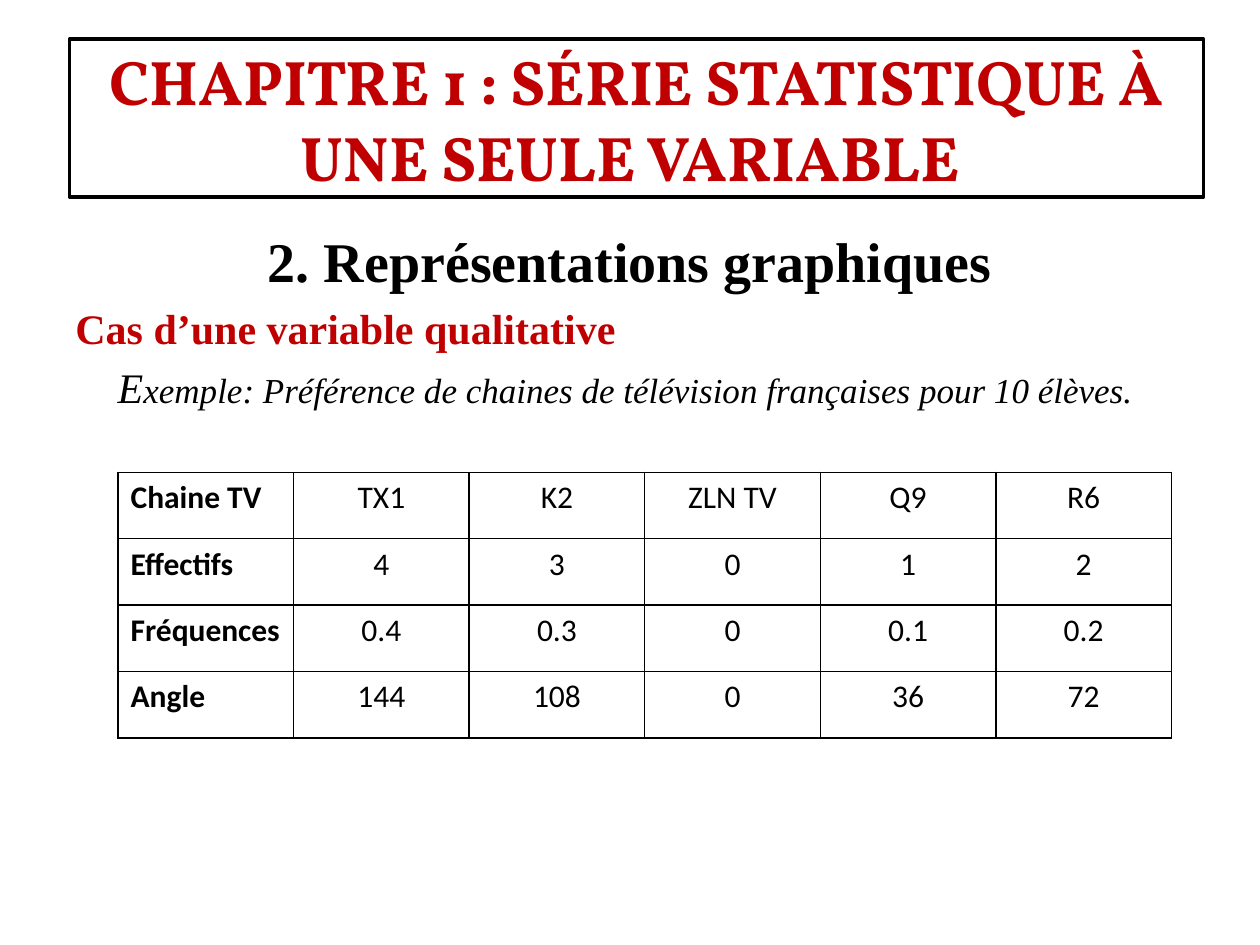
from dataclasses import dataclass

import pptx
import pptx.dml.color
import pptx.enum.text
import pptx.oxml
import pptx.oxml.ns
import pptx.util

Cm = pptx.util.Cm
Pt = pptx.util.Pt
ALIGN = pptx.enum.text.PP_ALIGN
ANCHOR = pptx.enum.text.MSO_ANCHOR

BLACK, WHITE, RED = "000000", "FFFFFF", "C00000"
SERIF = "Times New Roman"


@dataclass
class Span:
    text: str
    size: float
    color: str = BLACK
    bold: bool = False
    italic: bool = False


@dataclass
class Line:
    spans: list[Span]
    align: ALIGN = ALIGN.LEFT


def rgb(code: str) -> pptx.dml.color.RGBColor:
    return pptx.dml.color.RGBColor.from_string(code)


def add_text(para, text: str, *, font: str, size: float, color: str = BLACK,
             bold: bool = False, italic: bool = False) -> None:
    span = para.add_run()
    span.text = text
    span.font.name = font
    span.font.size = Pt(size)
    span.font.color.rgb = rgb(color)
    span.font.bold = bold
    span.font.italic = italic


def place(shape, left: float, top: float, width: float, height: float) -> None:
    shape.left, shape.top = Cm(left), Cm(top)
    shape.width, shape.height = Cm(width), Cm(height)


def add_borders(cell, color: str, width: float) -> None:
    properties = cell._tc.get_or_add_tcPr()
    for index, side in enumerate(("lnL", "lnR", "lnT", "lnB")):
        border = pptx.oxml.parse_xml(
            f'<a:{side} {pptx.oxml.ns.nsdecls("a")} w="{Pt(width)}">'
            f'<a:solidFill><a:srgbClr val="{color}"/></a:solidFill></a:{side}>')
        properties.insert(index, border)


def draw_title(page, text: str) -> None:
    title = page.shapes.title
    place(title, 1.4, 0.79, 22.86, 3.18)
    title.fill.solid()
    title.fill.fore_color.rgb = rgb(WHITE)
    title.line.color.rgb = rgb(BLACK)
    title.line.width = Pt(2)
    frame = title.text_frame
    frame.auto_size = pptx.enum.text.MSO_AUTO_SIZE.NONE
    frame.vertical_anchor = ANCHOR.MIDDLE
    para = frame.paragraphs[0]
    para.alignment = ALIGN.CENTER
    add_text(para, text, font="Vollkorn", size=36, color=RED, bold=True)


def draw_body(page, lines: list[Line]) -> None:
    box = page.shapes.add_textbox(Cm(1.27), Cm(4.45), Cm(22.86), Cm(4.6))
    frame = box.text_frame
    frame.word_wrap = True
    for index, line in enumerate(lines):
        para = frame.paragraphs[0] if index == 0 else frame.add_paragraph()
        para.alignment = line.align
        # Hanging indent, and a fifth of the text size above each line
        properties = para._p.get_or_add_pPr()
        properties.set("marL", str(Cm(0.95)))
        properties.set("indent", str(-Cm(0.95)))
        para.space_before = Pt(0.2 * max(span.size for span in line.spans))
        for span in line.spans:
            add_text(para, span.text, font=SERIF, size=span.size,
                     color=span.color, bold=span.bold, italic=span.italic)


def draw_table(page, rows: list[list[str]]) -> None:
    frame = page.shapes.add_table(len(rows), len(rows[0]), Cm(2.38), Cm(9.52),
                                  Cm(21.24), Cm(5.36))
    for row, values in enumerate(rows):
        for column, value in enumerate(values):
            cell = frame.table.cell(row, column)
            cell.fill.background()
            add_borders(cell, BLACK, 1)
            is_label = column == 0
            para = cell.text_frame.paragraphs[0]
            para.alignment = ALIGN.LEFT if is_label else ALIGN.CENTER
            add_text(para, value, font="Calibri", size=18, bold=is_label)


def main() -> None:
    deck = pptx.Presentation()
    deck.slide_width, deck.slide_height = Cm(25.4), Cm(19.05)
    page = deck.slides.add_slide(deck.slide_layouts.get_by_name("Title Only"))

    # Chapter title
    draw_title(page, "CHAPITRE 1 : SÉRIE STATISTIQUE À UNE SEULE VARIABLE ")

    # Section, case and example
    draw_body(page, [
        Line([Span("2. Représentations graphiques", 32, bold=True)], ALIGN.CENTER),
        Line([Span("Cas d’une variable qualitative", 24, RED, bold=True)]),
        Line([Span("E", 24, italic=True),
              Span("xemple: Préférence de chaines de télévision françaises "
                   "pour 10 élèves. ", 20, italic=True)], ALIGN.CENTER),
    ])

    # Counts, frequencies and angles by channel
    draw_table(page, [
        ["Chaine TV", "TX1", "K2", "ZLN TV", "Q9", "R6"],
        ["Effectifs", "4", "3", "0", "1", "2"],
        ["Fréquences", "0.4", "0.3", "0", "0.1", "0.2"],
        ["Angle", "144", "108", "0", "36", "72"],
    ])
    deck.save("out.pptx")


if __name__ == "__main__":
    main()
